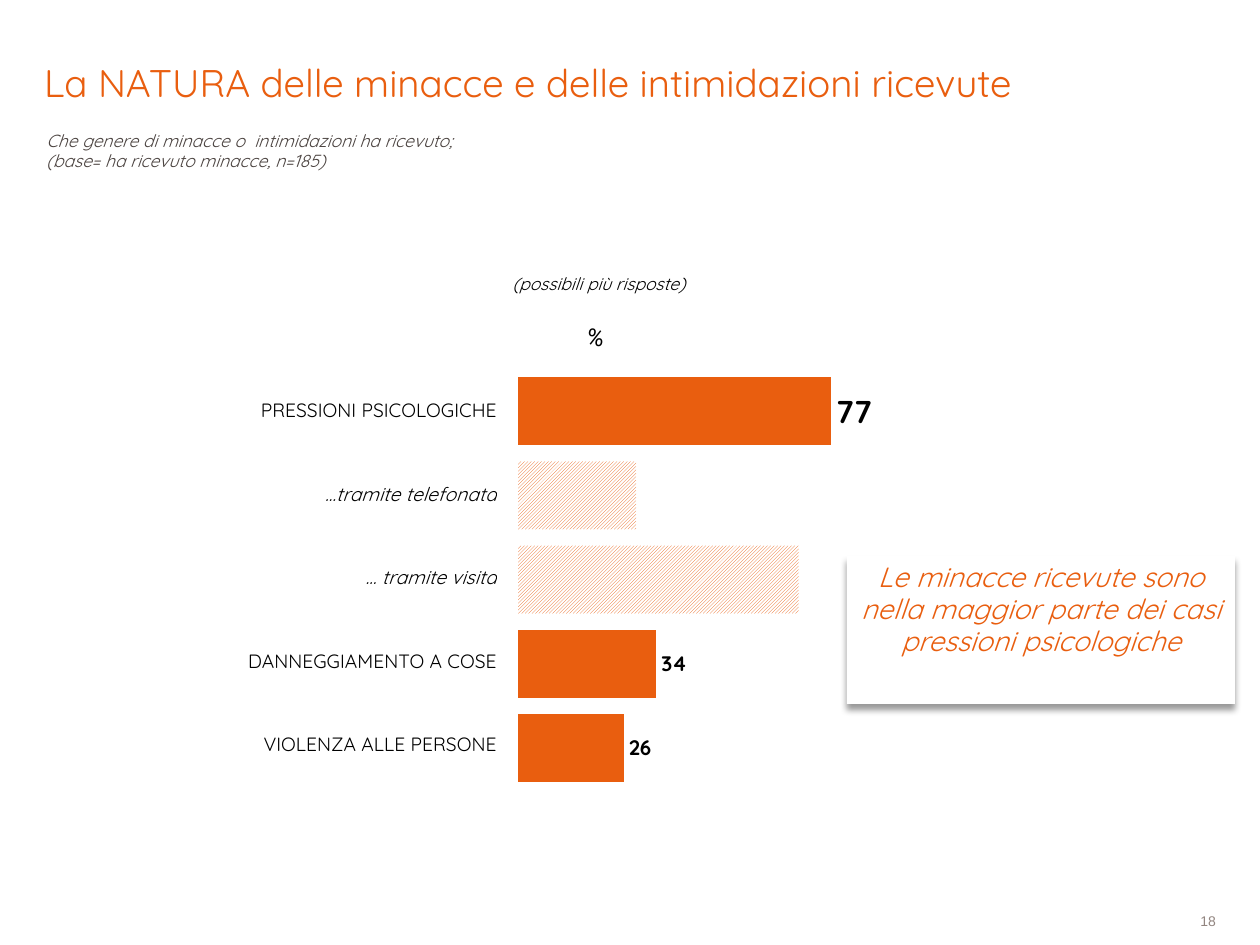
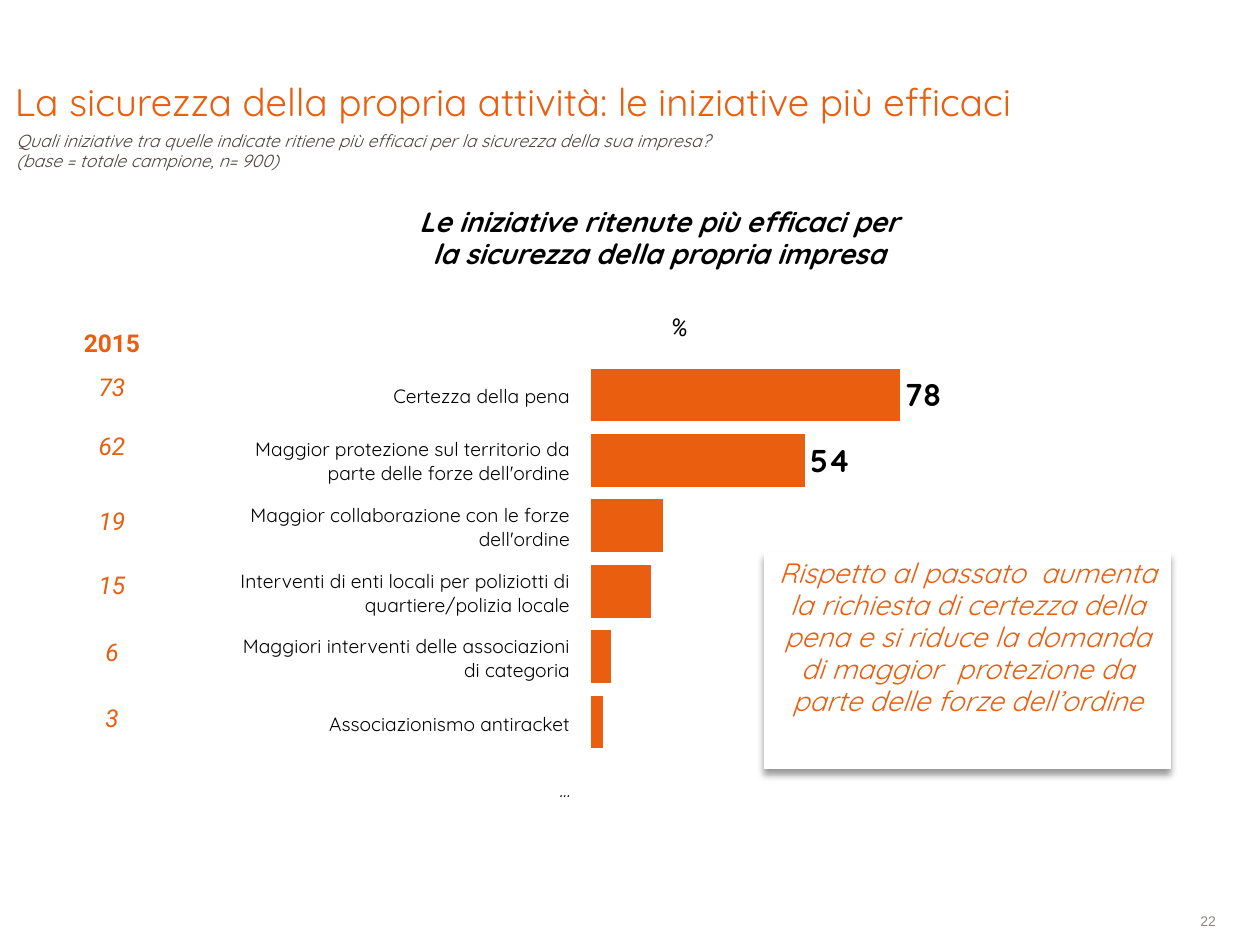
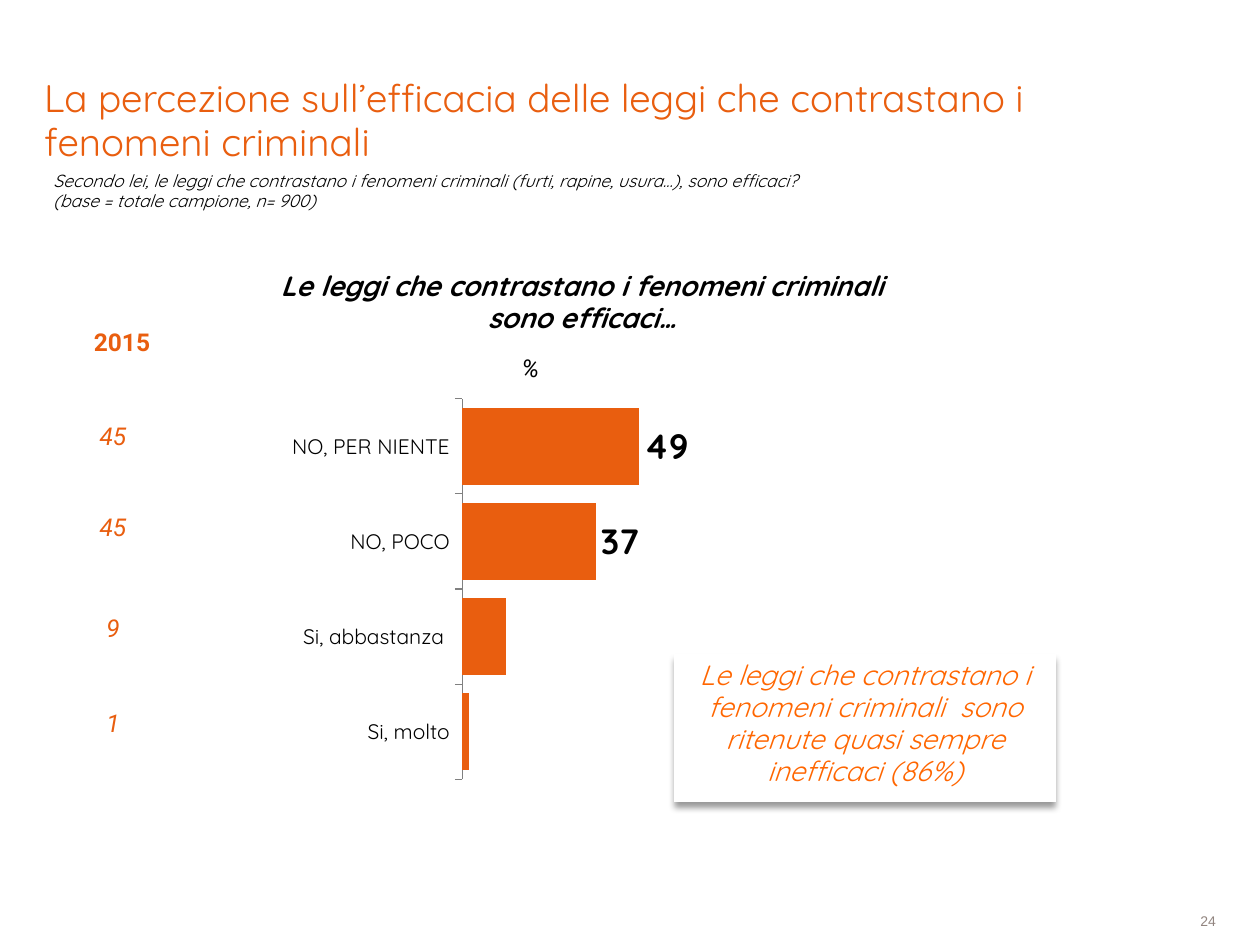
from lxml.etree import SubElement
from pptx import Presentation
from pptx.chart.data import CategoryChartData
from pptx.dml.color import RGBColor
from pptx.enum.chart import XL_CHART_TYPE, XL_LABEL_POSITION, XL_TICK_LABEL_POSITION, XL_TICK_MARK
from pptx.enum.dml import MSO_PATTERN
from pptx.enum.shapes import MSO_SHAPE
from pptx.enum.text import MSO_ANCHOR, MSO_AUTO_SIZE, PP_ALIGN
from pptx.oxml import parse_xml
from pptx.oxml.ns import nsdecls, qn
from pptx.util import Pt

PX = 914400 / 126
SLIDE_SIZE = (1260, 945)
COLORS = {
    "orange": "E95E0F",
    "bright": "FF6600",
    "brown": "4A423F",
    "black": "000000",
    "white": "FFFFFF",
    "footer": "928580",
    "axis": "808080",
}
STYLES = {
    "title": {"name": "Quicksand", "size": 22, "color": "orange"},
    "question": {"name": "Quicksand", "size": 10, "color": "brown", "italic": True},
    "caption": {"name": "Quicksand", "size": 10, "color": "black", "italic": True},
    "heading": {"name": "Quicksand", "size": 16, "color": "black", "bold": True, "italic": True},
    "percent": {"name": "Roboto", "size": 14, "color": "black", "italic": True},
    "label": {"name": "Quicksand", "size": 11, "color": "black"},
    "past": {"name": "Roboto", "size": 14, "color": "orange", "italic": True},
    "year": {"name": "Roboto", "size": 14, "color": "orange", "bold": True},
    "callout": {"name": "Quicksand", "size": 16, "color": "orange", "italic": True},
    "footer": {"name": "Arial", "size": 8, "color": "footer"},
    "chart": {"name": "Roboto", "size": 18, "color": "black"},
    "value": {"name": "Quicksand", "size": 12, "color": "black"},
}


def emu(pixels):
    """Turn pixels into EMU."""
    return round(pixels * PX)


def place(box):
    """Turn a pixel box into EMU lengths."""
    return [emu(length) for length in box]


def color(name):
    """Return a named colour."""
    return RGBColor.from_string(COLORS[name])


def format_font(font, style, **changes):
    """Apply a named style to a font, with optional changes."""
    values = {**STYLES[style], **changes}
    font.color.rgb = color(values.pop("color"))
    values["size"] = Pt(values["size"])
    for name, value in values.items():
        setattr(font, name, value)


def write_text(frame, text, style, align=PP_ALIGN.CENTER, anchor=MSO_ANCHOR.TOP,
               margin=None, spacing=0.95, **changes):
    """Fill a text frame with one paragraph per line of text."""
    settings = {"word_wrap": True, "auto_size": MSO_AUTO_SIZE.NONE, "vertical_anchor": anchor}
    if margin is not None:
        for side in ("left", "right", "top", "bottom"):
            settings[f"margin_{side}"] = margin
    for name, value in settings.items():
        setattr(frame, name, value)
    for index, line in enumerate(text.split("\n")):
        paragraph = frame.add_paragraph() if index else frame.paragraphs[0]
        paragraph.alignment = align
        paragraph.line_spacing = spacing
        run = paragraph.add_run()
        run.text = line
        format_font(run.font, style, **changes)


def add_text(slide, box, text, style, **options):
    """Add a text box."""
    write_text(slide.shapes.add_textbox(*place(box)).text_frame, text, style, **options)


def add_page(presentation, title, title_box, number):
    """Add a title-only slide with its title and page number."""
    slide = presentation.slides.add_slide(presentation.slide_layouts[5])
    shape = slide.shapes.title
    for name, value in zip(("left", "top", "width", "height"), place(title_box)):
        setattr(shape, name, value)
    write_text(shape.text_frame, title, "title", align=PP_ALIGN.LEFT,
               anchor=MSO_ANCHOR.BOTTOM, margin=0)
    add_text(slide, (1047, 913, 169, 16), number, "footer", align=PP_ALIGN.RIGHT,
             anchor=MSO_ANCHOR.MIDDLE, margin=0, spacing=1.0)
    return slide


def add_question(slide, box, text, **changes):
    """Add the survey question under the title."""
    add_text(slide, box, text, "question", align=PP_ALIGN.LEFT, **changes)


def add_percent(slide, left, top):
    """Add the percent sign above the bars."""
    add_text(slide, (left, top, 49, 29), "%", "percent", anchor=MSO_ANCHOR.MIDDLE, margin=0)


def set_plot_layout(chart, fractions):
    """Fix the inner plot area as fractions of the chart."""
    plot_area = chart.element.find(".//" + qn("c:plotArea"))
    for old in plot_area.findall(qn("c:layout")):
        plot_area.remove(old)
    layout = parse_xml(f"<c:layout {nsdecls('c')}><c:manualLayout/></c:layout>")
    values = [("layoutTarget", "inner"), ("xMode", "edge"), ("yMode", "edge"),
              *zip("xywh", fractions)]
    for tag, value in values:
        SubElement(layout[0], qn(f"c:{tag}")).set("val", str(value))
    plot_area.insert(0, layout)


def add_bars(slide, box, plot_fractions, categories, values, emphasis, hatched=(), show_axis=False):
    """Add the horizontal bar chart with larger labels on some bars."""
    data = CategoryChartData(number_format="0")
    data.categories = categories
    data.add_series("Series 1", values)
    chart = slide.shapes.add_chart(XL_CHART_TYPE.BAR_CLUSTERED, *place(box), data).chart
    chart.has_legend = chart.has_title = False
    format_font(chart.font, "chart")
    set_plot_layout(chart, plot_fractions)

    value_axis, category_axis = chart.value_axis, chart.category_axis
    limits = {"minimum_scale": 0, "maximum_scale": 100, "major_unit": 10,
              "has_major_gridlines": False, "visible": False}
    for name, value in limits.items():
        setattr(value_axis, name, value)
    category_axis.reverse_order = True
    category_axis.visible = show_axis
    if show_axis:
        category_axis.major_tick_mark = XL_TICK_MARK.OUTSIDE
        category_axis.tick_label_position = XL_TICK_LABEL_POSITION.LOW
        category_axis.format.line.color.rgb = color("axis")
        format_font(category_axis.tick_labels.font, "value")

    plot = chart.plots[0]
    plot.gap_width = 24
    plot.vary_by_categories = False
    plot.has_data_labels = True
    labels = plot.data_labels
    labels.show_value = True
    labels.number_format, labels.number_format_is_linked = "0", False
    labels.position = XL_LABEL_POSITION.OUTSIDE_END
    format_font(labels.font, "value")

    series = plot.series[0]
    series.format.fill.solid()
    series.format.fill.fore_color.rgb = color("orange")
    for index in hatched:
        fill = series.points[index].format.fill
        fill.patterned()
        fill.pattern = MSO_PATTERN.DARK_UPWARD_DIAGONAL
        fill.fore_color.rgb = color("orange")
        fill.back_color.rgb = color("white")
    for index, size in emphasis.items():
        label = series.points[index].data_label
        format_font(label.font, "value", size=size, bold=True)
        label.position = XL_LABEL_POSITION.OUTSIDE_END


def add_bar_labels(slide, box, labels):
    """Add the table of bar labels in equal rows, sub-items in italics."""
    table = slide.shapes.add_table(len(labels), 1, *place(box)).table
    table.first_row = table.horz_banding = False
    for row, label in zip(table.rows, labels):
        row.height = emu(box[3] / len(labels))
        cell = row.cells[0]
        cell.fill.background()
        cell.vertical_anchor = MSO_ANCHOR.MIDDLE
        for side in ("left", "right", "top", "bottom"):
            setattr(cell, f"margin_{side}", emu(1))
        paragraph = cell.text_frame.paragraphs[0]
        paragraph.alignment = PP_ALIGN.RIGHT
        run = paragraph.add_run()
        run.text = label
        format_font(run.font, "label", italic=label.startswith("…"))


def add_past_column(slide, left, year_box, values):
    """Add the 2015 column from pairs of value and top."""
    add_text(slide, year_box, "2015", "year", anchor=MSO_ANCHOR.MIDDLE)
    for value, top in values:
        add_text(slide, (left, top, 82, 69), value, "past", anchor=MSO_ANCHOR.MIDDLE)


def add_callout(slide, box, text, **changes):
    """Add the white comment card with its soft shadow."""
    shape = slide.shapes.add_shape(MSO_SHAPE.RECTANGLE, *place(box))
    shape.shadow.inherit = False
    shape.fill.solid()
    shape.fill.fore_color.rgb = color("white")
    shape.line.fill.background()
    effects = shape.element.spPr.find(qn("a:effectLst"))
    effects.append(parse_xml(
        f'<a:outerShdw {nsdecls("a")} blurRad="{Pt(4)}" dist="{Pt(3)}" dir="5400000" '
        f'rotWithShape="0"><a:srgbClr val="{COLORS["black"]}"><a:alpha val="40000"/>'
        '</a:srgbClr></a:outerShdw>'))
    write_text(shape.text_frame, text, "callout", **changes)


def build_threats(presentation):
    """Build the slide on the nature of the threats."""
    slide = add_page(presentation, "La NATURA delle minacce e delle intimidazioni ricevute",
                     (44, 16, 1052, 90), "18")
    add_question(slide, (34, 125, 854, 55),
                 "Che genere di minacce o  intimidazioni ha ricevuto;\n"
                 "(base= ha ricevuto minacce, n=185)")
    add_bars(slide, (350, 362, 820, 558), (0.205, 0.013, 0.496, 0.905),
             list("123456"), (77, 29, 69, 34, 26, None), {0: 18, 3: 12, 4: 12}, hatched=(1, 2))
    add_bar_labels(slide, (160, 369, 338, 417),
                   ("PRESSIONI PSICOLOGICHE", "…tramite telefonata", "… tramite visita",
                    "DANNEGGIAMENTO A COSE", "VIOLENZA ALLE PERSONE"))
    add_percent(slide, 571, 324)
    add_text(slide, (364, 268, 470, 34), "(possibili più risposte)", "caption")
    add_callout(slide, (847, 556, 388, 148),
                "Le minacce ricevute sono nella maggior parte dei casi pressioni psicologiche")


def build_initiatives(presentation):
    """Build the slide on the most effective initiatives."""
    slide = add_page(presentation,
                     "La sicurezza della propria attività: le iniziative più efficaci",
                     (15, 35, 1052, 90), "22")
    add_question(slide, (4, 125, 1241, 55),
                 "Quali iniziative tra quelle indicate ritiene più efficaci per la sicurezza "
                 "della sua impresa?\n(base = totale campione, n= 900)")
    add_bars(slide, (431, 357, 798, 541), (0.201, 0.01, 0.496, 0.967),
             list("12345678"), (78, 54, 18, 15, 5, 3, None, None), {0: 18, 1: 18})
    add_bar_labels(slide, (233, 363, 338, 460),
                   ("Certezza della pena",
                    "Maggior protezione sul territorio da parte delle forze dell'ordine",
                    "Maggior collaborazione con le forze dell'ordine",
                    "Interventi di enti locali per poliziotti di quartiere/polizia locale",
                    "Maggiori interventi delle associazioni di categoria",
                    "Associazionismo antiracket", "…"))
    add_text(slide, (402, 204, 514, 69),
             "Le iniziative ritenute più efficaci per la sicurezza della propria impresa",
             "heading", anchor=MSO_ANCHOR.MIDDLE)
    add_percent(slide, 655, 314)
    add_past_column(slide, 71, (52, 310, 120, 69),
                    (("73", 354), ("62", 413), ("19", 488), ("15", 552), ("6", 619), ("3", 685)))
    add_callout(slide, (764, 552, 407, 217),
                "Rispetto al passato  aumenta la richiesta di certezza della pena e si riduce "
                "la domanda di maggior  protezione da parte delle forze dell’ordine")


def build_laws(presentation):
    """Build the slide on how effective the laws are felt to be."""
    slide = add_page(presentation,
                     "La percezione sull’efficacia delle leggi che contrastano i fenomeni criminali",
                     (44, 75, 1052, 90), "24")
    add_bars(slide, (257, 398, 728, 529), (0.282, 0, 0.496, 0.721),
             ("NO, PER NIENTE", "NO, POCO", "Si, abbastanza ", "Si, molto"),
             (49, 37, 12, 2), {0: 20, 1: 20}, show_axis=True)
    add_percent(slide, 506, 355)
    add_text(slide, (233, 265, 698, 81),
             "Le leggi che contrastano i fenomeni criminali sono efficaci…", "heading")
    add_question(slide, (41, 165, 1172, 55),
                 "Secondo lei, le leggi che contrastano i fenomeni criminali "
                 "(furti, rapine, usura…), sono efficaci?\n(base = totale campione, n= 900)",
                 color="black")
    add_past_column(slide, 72, (62, 309, 120, 69),
                    (("45", 403), ("45", 494), ("9", 595), ("1", 690)))
    add_callout(slide, (674, 654, 382, 148),
                "Le leggi che contrastano i fenomeni criminali  sono ritenute quasi sempre "
                "inefficaci (86%)", color="bright")


def main():
    """Build and save the three slides."""
    presentation = Presentation()
    presentation.slide_width, presentation.slide_height = place(SLIDE_SIZE)
    for build in (build_threats, build_initiatives, build_laws):
        build(presentation)
    presentation.save("out.pptx")


if __name__ == "__main__":
    main()
